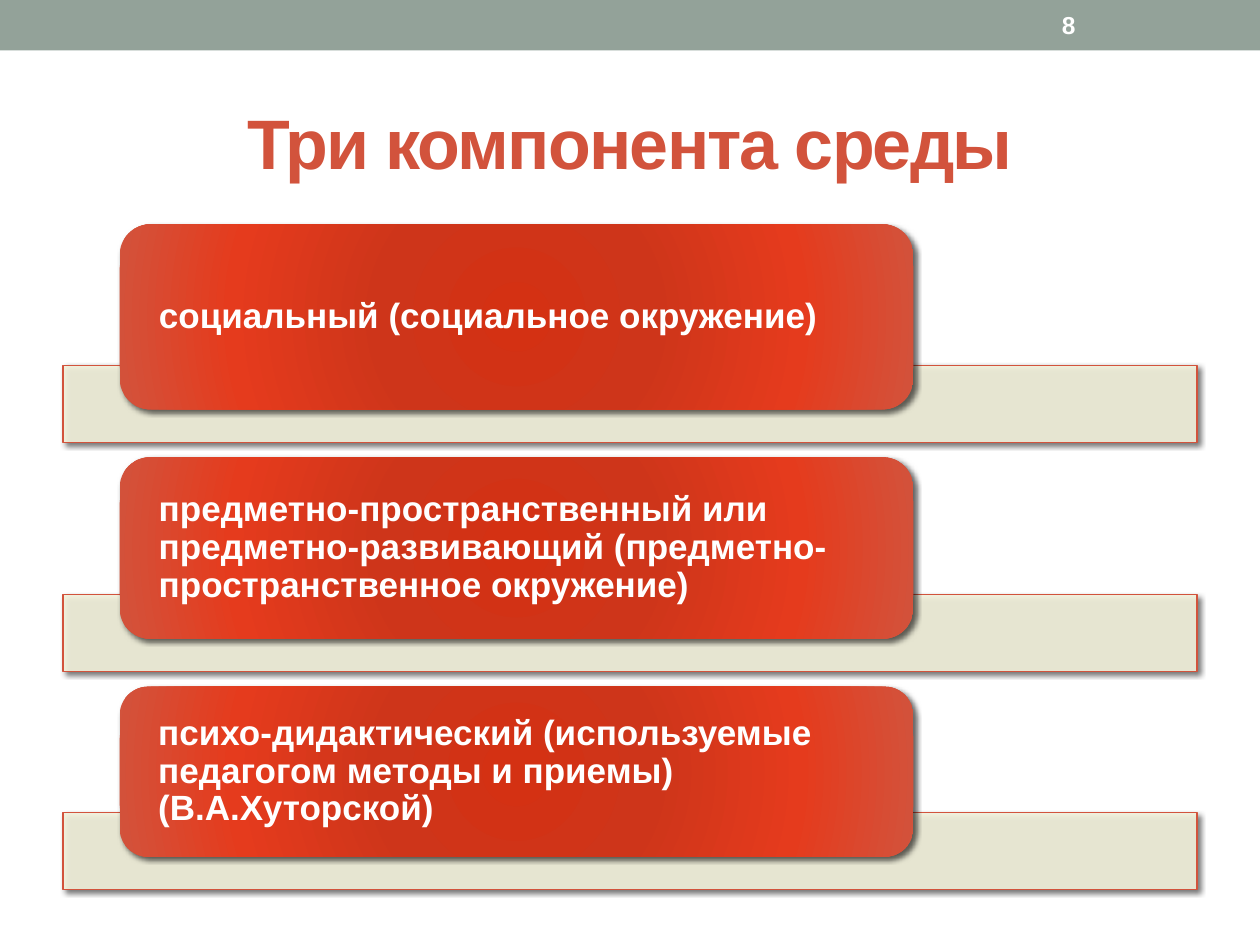
from pptx import Presentation
from pptx.dml.color import RGBColor
from pptx.enum import shapes, text
from pptx.oxml import parse_xml
from pptx.oxml.ns import nsdecls, qn
from pptx.util import Inches, Pt

COLORS = {
    "header": "93A299",
    "accent": "D2533C",
    "bar": "F3F2DC",
    "white": "FFFFFF",
    "shadow": "000000",
}
# Position in percent and colour, from the centre outwards
CARD_GRADIENT = [(0, "D43113"), (34, "CE351A"), (70, "E53B1D"), (100, COLORS["accent"])]

BAR_HEIGHT = 0.61
BAR_OVERLAP = 0.35
# Card top, card height, wording
COMPONENTS = [
    (1.78, 1.47, "социальный (социальное окружение)"),
    (3.63, 1.44, "предметно-пространственный или предметно-развивающий "
                 "(предметно-пространственное окружение)"),
    (5.45, 1.35, "психо-дидактический (используемые педагогом методы и приемы) "
                 "(В.А.Хуторской)"),
]


def rgb(name):
    return RGBColor.from_string(COLORS[name])


def add_box(slide, kind, left, top, width, height, fill=None):
    shape = slide.shapes.add_shape(
        kind, Inches(left), Inches(top), Inches(width), Inches(height))
    shape.shadow.inherit = False
    shape.line.fill.background()
    if fill:
        shape.fill.solid()
        shape.fill.fore_color.rgb = rgb(fill)
    return shape


def add_shadow(shape):
    effects = shape._element.spPr.find(qn("a:effectLst"))
    effects.append(parse_xml(
        f'<a:outerShdw {nsdecls("a")} blurRad="{Pt(3)}" dist="{Pt(2)}" '
        f'dir="{45 * 60000}" algn="tl" rotWithShape="0">'
        f'<a:srgbClr val="{COLORS["shadow"]}"><a:alpha val="60000"/></a:srgbClr>'
        '</a:outerShdw>'))


def set_radial_gradient(shape, stops):
    shape.fill.gradient()
    properties = shape._element.spPr
    stop_xml = "".join(
        f'<a:gs pos="{position * 1000}"><a:srgbClr val="{color}"/></a:gs>'
        for position, color in stops)
    gradient = parse_xml(
        f'<a:gradFill {nsdecls("a")} rotWithShape="1"><a:gsLst>{stop_xml}</a:gsLst>'
        '<a:path path="circle">'
        '<a:fillToRect l="100000" t="100000" r="100000" b="100000"/>'
        '</a:path></a:gradFill>')
    properties.replace(properties.find(qn("a:gradFill")), gradient)


def write(shape, wording, size, color, align=text.PP_ALIGN.LEFT):
    """Fill the shape with one bold, vertically centred paragraph."""
    frame = shape.text_frame
    frame.word_wrap = True
    frame.vertical_anchor = text.MSO_ANCHOR.MIDDLE
    paragraph = frame.paragraphs[0]
    paragraph.alignment = align
    run = paragraph.add_run()
    run.text = wording
    run.font.name = "Arial"
    run.font.size = Pt(size)
    run.font.bold = True
    run.font.color.rgb = rgb(color)
    return paragraph


def add_label(slide, left, top, width, height, *style):
    box = slide.shapes.add_textbox(
        Inches(left), Inches(top), Inches(width), Inches(height))
    return write(box, *style)


def add_bar(slide, top):
    bar = add_box(slide, shapes.MSO_SHAPE.RECTANGLE, 0.5, top, 9, BAR_HEIGHT, "bar")
    color = bar._element.spPr.find(qn("a:solidFill"))[0]
    color.append(parse_xml(f'<a:alpha {nsdecls("a")} val="90000"/>'))
    bar.line.color.rgb = rgb("accent")
    bar.line.width = Pt(0.75)
    add_shadow(bar)


def add_card(slide, top, height, wording):
    card = add_box(slide, shapes.MSO_SHAPE.ROUNDED_RECTANGLE, 0.95, top, 6.3, height)
    set_radial_gradient(card, CARD_GRADIENT)
    add_shadow(card)
    frame = card.text_frame
    frame.margin_left = frame.margin_right = Inches(0.24)
    frame.margin_top = frame.margin_bottom = 0
    paragraph = write(card, wording, 20, "white")
    paragraph.line_spacing = 0.9


def main():
    presentation = Presentation()
    presentation.slide_width = Inches(10)
    presentation.slide_height = Inches(7.5)
    slide = presentation.slides.add_slide(presentation.slide_layouts[6])

    add_box(slide, shapes.MSO_SHAPE.RECTANGLE, 0, 0, 10, 0.4, "header")
    title = add_label(slide, 0.5, 0.58, 9, 1.08,
                      "Три компонента среды", 40, "accent", text.PP_ALIGN.CENTER)
    title.runs[0].font._element.set("spc", "-100")

    for top, height, wording in COMPONENTS:
        add_bar(slide, top + height - BAR_OVERLAP)
        add_card(slide, top, height, wording)

    add_label(slide, 8.33, 0.02, 1.17, 0.36, "8", 14, "white")
    presentation.save("out.pptx")


if __name__ == "__main__":
    main()
